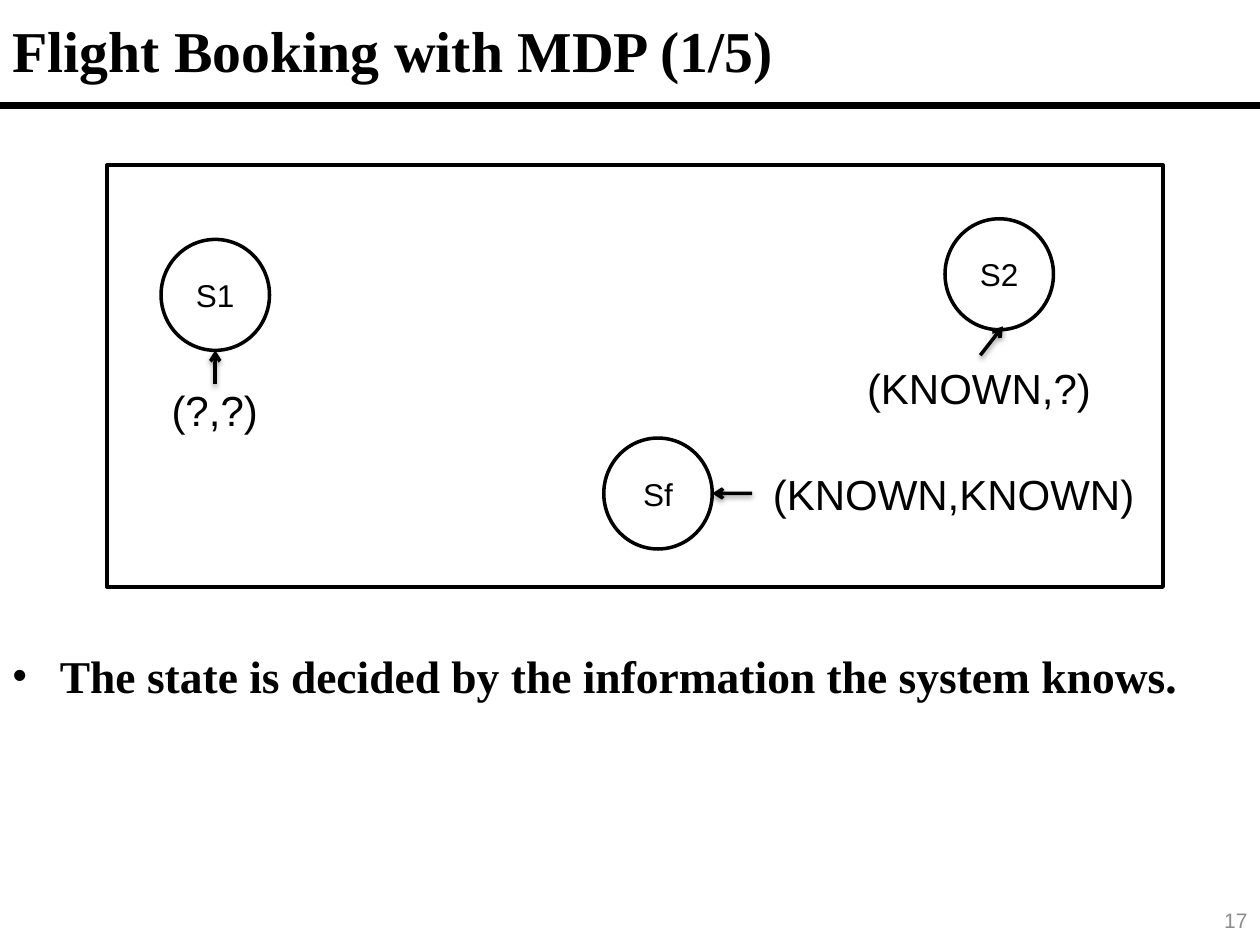
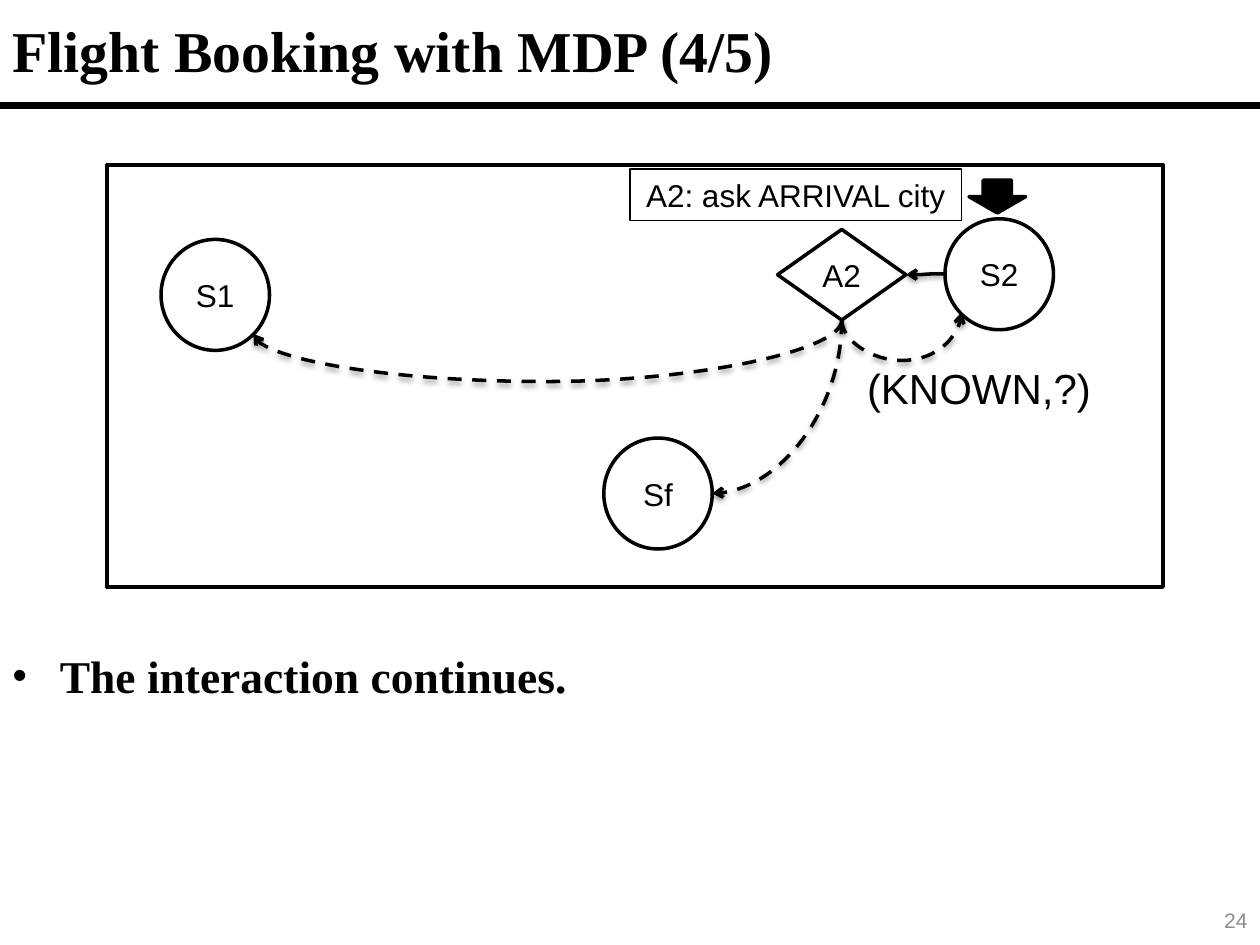
from lxml.etree import SubElement
from pptx import Presentation
from pptx.dml.color import RGBColor
from pptx.enum.dml import MSO_LINE
from pptx.enum.shapes import MSO_CONNECTOR, MSO_SHAPE
from pptx.enum.text import MSO_ANCHOR, MSO_AUTO_SIZE, PP_ALIGN
from pptx.oxml.ns import qn
from pptx.util import Pt

BLACK, WHITE, GREY = "000000", "FFFFFF", "8C8C8C"
SERIF, SANS = "Times New Roman", "Arial"
NODE_WIDTH, NODE_HEIGHT = 62, 63.4
STATES = {"S1": (123, 168.5), "Sf": (376, 282), "S2": (571, 156.7)}
ACTION = (481, 157)
ACTION_SIZE = (73.4, 51.8)


def color(hex_value):
    return RGBColor.from_string(hex_value)


def add_xml(parent, tag, **attributes):
    return SubElement(parent, qn(tag), {key: str(value) for key, value in attributes.items()})


class Deck:
    def __init__(self):
        self.presentation = Presentation()
        self.presentation.slide_width = Pt(720)
        self.presentation.slide_height = Pt(540)
        self.slide = None

    def start_slide(self, title, point, number):
        layout = self.presentation.slide_layouts[1]
        self.slide = self.presentation.slides.add_slide(layout)
        heading, body = self.slide.placeholders
        self.connect((0, 60.3), (720, 60.3), width=4.5, head=False)
        self.place(heading, (0, 0, 720, 57))
        self.set_text(heading, title, 33, SERIF, bold=True, align=PP_ALIGN.LEFT)
        self.place(body, (0, 366.5, 720, 39))
        self.set_text(body, point, 26, SERIF, bold=True, align=PP_ALIGN.LEFT, anchor=MSO_ANCHOR.TOP)
        self.bullet(body.text_frame.paragraphs[0])
        page = self.slide.shapes.add_textbox(Pt(558), Pt(511), Pt(162), Pt(29))
        self.set_text(page, number, 12, hex_value=GREY, align=PP_ALIGN.RIGHT)

    def place(self, shape, box):
        shape.left, shape.top, shape.width, shape.height = map(Pt, box)

    def bullet(self, paragraph):
        properties = paragraph._p.get_or_add_pPr()
        properties.set("marL", str(Pt(27)))
        properties.set("indent", str(-Pt(27)))
        add_xml(properties, "a:buSzPct", val=90000)
        add_xml(properties, "a:buFont", typeface=SANS)
        add_xml(properties, "a:buChar", char="•")

    def set_text(self, shape, text, size, font=SANS, hex_value=BLACK, bold=False,
                 align=PP_ALIGN.CENTER, anchor=MSO_ANCHOR.MIDDLE, wrap=True):
        frame = shape.text_frame
        frame.text = text
        frame.word_wrap = wrap
        frame.auto_size = MSO_AUTO_SIZE.NONE
        frame.vertical_anchor = anchor
        paragraph = frame.paragraphs[0]
        paragraph.alignment = align
        style = paragraph.runs[0].font
        style.size, style.name, style.bold = Pt(size), font, bold
        style.color.rgb = color(hex_value)

    def box(self, preset, bounds, text="", size=18, fill=WHITE, border=2):
        shape = self.slide.shapes.add_shape(preset, *map(Pt, bounds))
        shape.shadow.inherit = False
        shape.fill.solid()
        shape.fill.fore_color.rgb = color(fill)
        if border:
            shape.line.color.rgb = color(BLACK)
            shape.line.width = Pt(border)
        else:
            shape.line.fill.background()
        if text:
            self.set_text(shape, text, size, wrap=False)

    def node(self, preset, center, size, text):
        (x, y), (width, height) = center, size
        self.box(preset, (x - width / 2, y - height / 2, width, height), text)

    def label(self, bounds, text):
        self.box(MSO_SHAPE.RECTANGLE, bounds, text, size=24, border=0)

    def connect(self, start, end, kind=MSO_CONNECTOR.STRAIGHT, width=2, dashed=False, head=True):
        link = self.slide.shapes.add_connector(kind, *map(Pt, start + end))
        link.line.color.rgb = color(BLACK)
        link.line.width = Pt(width)
        if dashed:
            link.line.dash_style = MSO_LINE.DASH
        effects = add_xml(link._element.spPr, "a:effectLst")
        if head:
            add_xml(link.line._get_or_add_ln(), "a:tailEnd", type="arrow")
            shadow = add_xml(effects, "a:outerShdw", blurRad=Pt(3.1), dist=Pt(1.6),
                             dir=5400000, rotWithShape=0)
            add_xml(add_xml(shadow, "a:srgbClr", val=BLACK), "a:alpha", val=38000)
        return link

    def curve_down(self, start, end, lowest=None):
        middle_x, middle_y = (start[0] + end[0]) / 2, (start[1] + end[1]) / 2
        dx, dy = start[0] - middle_x, start[1] - middle_y
        link = self.connect((middle_x + dy, middle_y - dx), (middle_x - dy, middle_y + dx),
                            MSO_CONNECTOR.CURVE, dashed=True)
        properties = link._element.spPr
        properties.find(qn("a:xfrm")).set("rot", "5400000")
        geometry = properties.find(qn("a:prstGeom"))
        if lowest is None:
            geometry.set("prst", "curvedConnector2")
        else:
            bend = round((lowest - start[1]) / (end[1] - start[1]) * 100000)
            add_xml(geometry.find(qn("a:avLst")), "a:gd", name="adj1", fmla=f"val {bend}")

    def states(self):
        self.box(MSO_SHAPE.RECTANGLE, (61.2, 94.3, 603.4, 241.2))
        for name, center in STATES.items():
            self.node(MSO_SHAPE.OVAL, center, (NODE_WIDTH, NODE_HEIGHT), name)

    def known_departure(self):
        self.label((478.8, 203, 161.3, 36.7), "(KNOWN,?)")


def build_state_slide(deck):
    deck.start_slide("Flight Booking with MDP (1/5)",
                     "The state is decided by the information the system knows.", "17")
    deck.states()
    deck.label((72.7, 219.6, 100, 29.5), "(?,?)")
    deck.known_departure()
    deck.label((429.8, 263.5, 230.4, 36.7), "(KNOWN,KNOWN)")
    deck.connect((123, 219.6), (123, 200.2))
    deck.connect((560.2, 203), (573.1, 186.5))
    deck.connect((429.8, 281.9), (407, 282))


def build_action_slide(deck):
    deck.start_slide("Flight Booking with MDP (4/5)", "The interaction continues.", "24")
    deck.states()
    deck.node(MSO_SHAPE.DIAMOND, ACTION, ACTION_SIZE, "A2")
    deck.connect((540, 156.5), (517.7, 157), MSO_CONNECTOR.CURVE)
    deck.box(MSO_SHAPE.DOWN_ARROW, (553.7, 103, 32.4, 18.7), fill=BLACK)
    deck.known_departure()
    deck.box(MSO_SHAPE.RECTANGLE, (360, 96.5, 189.4, 29.5), "A2: ask ARRIVAL city", border=1)
    action_bottom = (ACTION[0], ACTION[1] + ACTION_SIZE[1] / 2)
    deck.curve_down(action_bottom, (549.4, 178.6), lowest=206)
    deck.curve_down(action_bottom, (407, 282))
    deck.curve_down(action_bottom, (144.7, 190.8), lowest=218)


def main():
    deck = Deck()
    build_state_slide(deck)
    build_action_slide(deck)
    deck.presentation.save("out.pptx")


if __name__ == "__main__":
    main()
